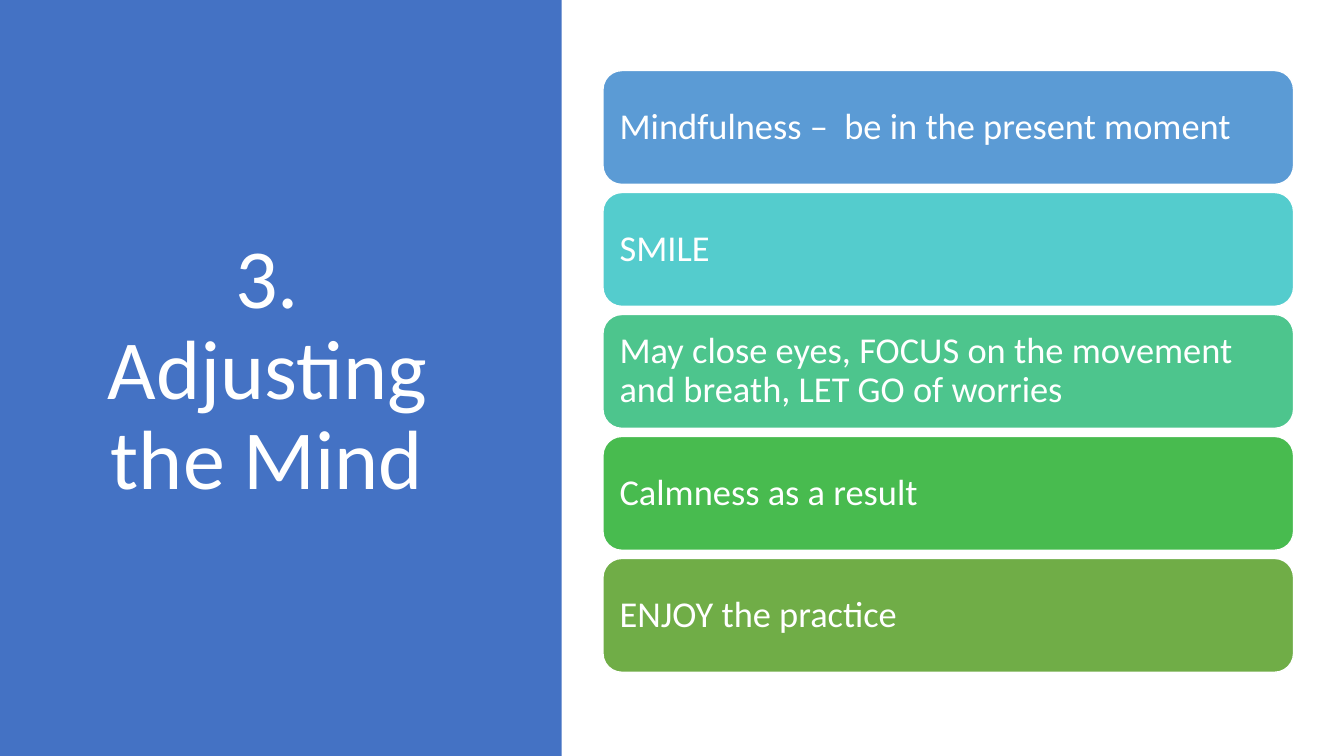
"""Build the "Adjusting the Mind" slide with a title panel and five coloured cards."""
from pptx import Presentation
from pptx.dml.color import RGBColor
from pptx.enum.shapes import MSO_SHAPE as Shape
from pptx.enum.text import MSO_ANCHOR as Anchor, PP_ALIGN as Align
from pptx.util import Inches, Pt

FONT = "Calibri"
WHITE = "FFFFFF"
PANEL_BLUE = "4472C4"
TITLE_LINES = ["3.", "Adjusting the Mind"]
CARDS = [
    ("Mindfulness –  be in the present moment", "5B9BD5"),
    ("SMILE", "54CCCD"),
    ("May close eyes, FOCUS on the movement and breath, LET GO of worries", "4DC58D"),
    ("Calmness as a result", "48BB4F"),
    ("ENJOY the practice", "70AD47"),
]
CARD_LEFT, CARD_TOP, CARD_WIDTH, CARD_HEIGHT = 5.98, 0.7, 6.85, 1.13
CARD_PITCH = 1.21
CARD_INSET = 0.11


def color(hex_code):
    return RGBColor.from_string(hex_code)


def add_block(slide, kind, box, fill, line=None):
    shape = slide.shapes.add_shape(kind, *map(Inches, box))
    shape.shadow.inherit = False
    shape.fill.solid()
    shape.fill.fore_color.rgb = color(fill)
    if line:
        shape.line.color.rgb = color(line)
        shape.line.width = Pt(1)
    else:
        shape.line.fill.background()
    return shape


def write(shape, lines, size, align):
    frame = shape.text_frame
    frame.word_wrap = True
    frame.vertical_anchor = Anchor.MIDDLE
    paragraph = frame.paragraphs[0]
    paragraph.alignment = align
    paragraph.line_spacing = 0.9
    for index, line in enumerate(lines):
        if index:
            paragraph.add_line_break()
        run = paragraph.add_run()
        run.text = line
        run.font.name = FONT
        run.font.size = Pt(size)
        run.font.color.rgb = color(WHITE)


def main():
    presentation = Presentation()
    presentation.slide_width = Inches(13.33)
    presentation.slide_height = Inches(7.5)
    slide = presentation.slides.add_slide(presentation.slide_layouts[6])

    add_block(slide, Shape.RECTANGLE, (0, 0, 5.57, 7.5), PANEL_BLUE)
    title = slide.shapes.add_textbox(*map(Inches, (0.57, 0.68, 4.16, 6.02)))
    write(title, TITLE_LINES, 60, Align.CENTER)

    for index, (text, fill) in enumerate(CARDS):
        box = (CARD_LEFT, CARD_TOP + index * CARD_PITCH, CARD_WIDTH, CARD_HEIGHT)
        card = add_block(slide, Shape.ROUNDED_RECTANGLE, box, fill, WHITE)
        frame = card.text_frame
        frame.margin_left = frame.margin_right = Inches(CARD_INSET)
        frame.margin_top = frame.margin_bottom = Inches(CARD_INSET)
        write(card, [text], 26, Align.LEFT)

    presentation.save("out.pptx")


if __name__ == "__main__":
    main()
